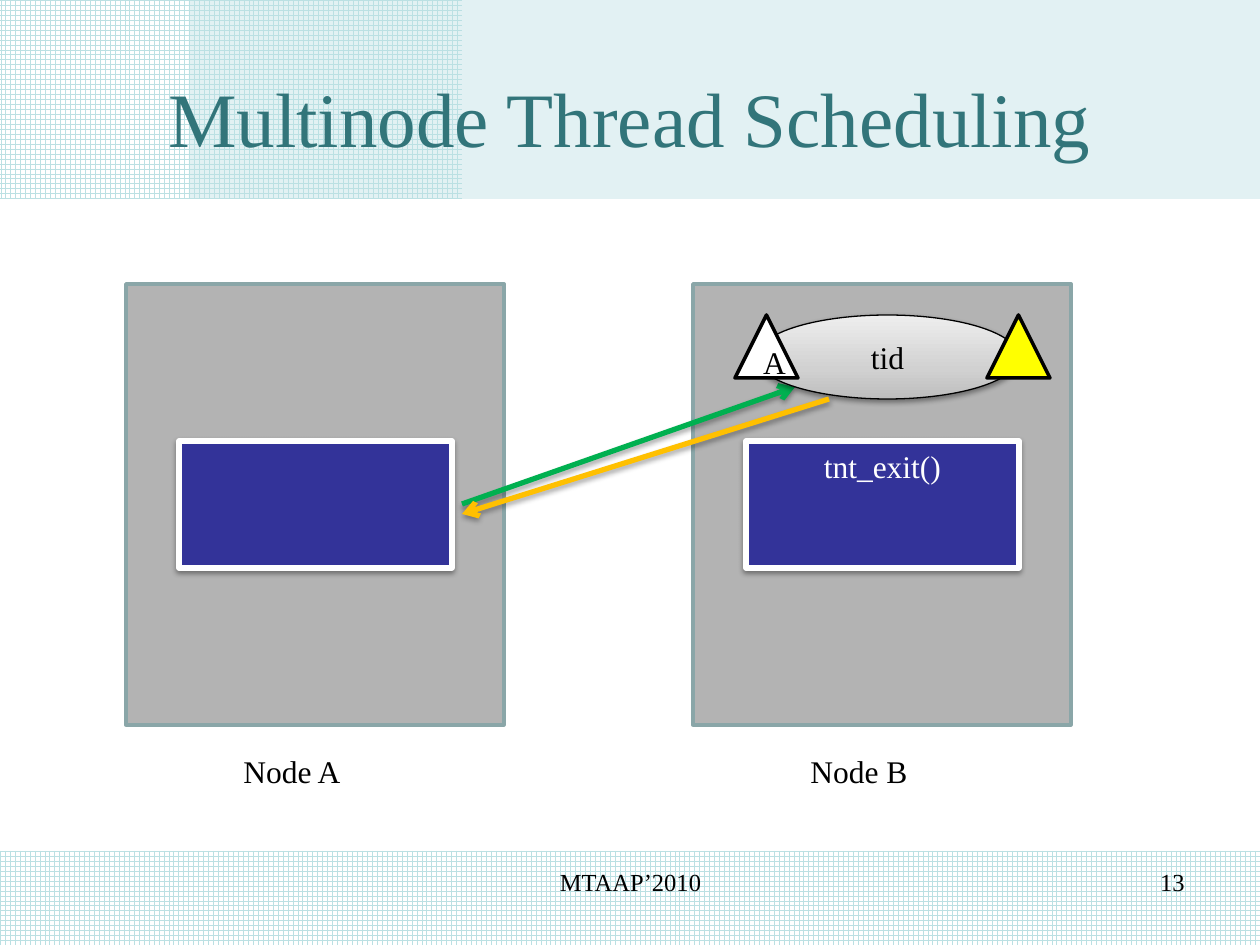
from copy import deepcopy
from pptx import Presentation
from pptx.dml.color import RGBColor
from pptx.enum.dml import MSO_PATTERN
from pptx.enum.shapes import MSO_CONNECTOR, MSO_SHAPE
from pptx.enum.text import MSO_ANCHOR, MSO_AUTO_SIZE, PP_ALIGN
from pptx.oxml.ns import qn
from pptx.util import Emu, Pt
from lxml.etree import SubElement

WHITE = RGBColor(0xFF, 0xFF, 0xFF)
BLACK = RGBColor(0, 0, 0)
PALE = RGBColor(0xBB, 0xE0, 0xE3)
TEAL = RGBColor(0x32, 0x75, 0x7A)
GRAY = RGBColor(0xB3, 0xB3, 0xB3)
EDGE = RGBColor(0x8A, 0xA6, 0xA8)
NAVY = RGBColor(0x33, 0x33, 0x99)
GREEN = RGBColor(0x00, 0xB0, 0x50)
AMBER = RGBColor(0xFF, 0xC0, 0x00)
YELLOW = RGBColor(0xFF, 0xFF, 0x00)
DARK = RGBColor(0xBD, 0xBD, 0xBD)
MID = RGBColor(0xD1, 0xD1, 0xD1)
LIGHT = RGBColor(0xEE, 0xEE, 0xEE)
FONT = "Times New Roman"


def px(*nums):
    return [Emu(round(num * 914400 / 126)) for num in nums]


def write(frame, text, size, color, align, anchor=MSO_ANCHOR.TOP):
    frame.vertical_anchor = anchor
    para = frame.paragraphs[0]
    para.alignment = align
    run = para.add_run()
    run.text = text
    run.font.size = Pt(size)
    run.font.name = FONT
    run.font.color.rgb = color


def shade(props, alpha, dist):
    effect = props.find(qn("a:effectLst"))
    if effect is None:
        effect = SubElement(props, qn("a:effectLst"))
    outer = SubElement(effect, qn("a:outerShdw"), blurRad=str(Pt(3.1)),
                       dist=str(Pt(dist)), dir="5400000", rotWithShape="0")
    tint = SubElement(outer, qn("a:srgbClr"), val="000000")
    SubElement(tint, qn("a:alpha"), val=str(alpha * 1000))


def draw(slide, kind, box, fill=None, edge=None, width=0):
    shape = slide.shapes.add_shape(kind, *px(*box))
    shape.shadow.inherit = False
    if fill is not None:
        shape.fill.solid()
        shape.fill.fore_color.rgb = fill
    if edge is None:
        shape.line.fill.background()
    else:
        shape.line.color.rgb = edge
        shape.line.width = Pt(width)
    return shape


def label(slide, box, text, size, align, wrap=True):
    frame = slide.shapes.add_textbox(*px(*box)).text_frame
    frame.word_wrap = wrap
    if not wrap:
        frame.auto_size = MSO_AUTO_SIZE.SHAPE_TO_FIT_TEXT
    write(frame, text, size, BLACK, align)


def arrow(slide, start, end, color):
    line = slide.shapes.add_connector(MSO_CONNECTOR.STRAIGHT,
                                      *px(*start, *end))
    line.line.color.rgb = color
    line.line.width = Pt(3)
    SubElement(line.line._get_or_add_ln(), qn("a:tailEnd"), type="arrow")
    shade(line._element.spPr, 35, 1.8)


def grid(slide, box):
    fill = draw(slide, MSO_SHAPE.FLOWCHART_PROCESS, box).fill
    fill.patterned()
    fill.pattern = MSO_PATTERN.LARGE_GRID
    fill.fore_color.rgb = PALE
    fill.back_color.rgb = WHITE


def header(slide, box, text):
    x, y, w, h = box
    grid(slide, (x, y, 462, h))
    band = draw(slide, MSO_SHAPE.FLOWCHART_PROCESS,
                (x + 189, y, w - 189, h), PALE)
    color = band._element.spPr.find(qn("a:solidFill"))[0]
    SubElement(color, qn("a:alpha"), val="42000")
    title = slide.shapes.title
    title.left, title.top, title.width, title.height = px(
        x + 63, y + 38, w - 126, 157)
    write(title.text_frame, text, 44, TEAL, PP_ALIGN.CENTER,
          MSO_ANCHOR.MIDDLE)
    slide.shapes._spTree.append(title._element)


def footer(slide, box, text, page):
    x, y, w, h = box
    grid(slide, box)
    label(slide, (x + 431, y + 10, 399, 66), text, 14, PP_ALIGN.CENTER)
    label(slide, (x + 903, y + 10, 294, 66), page, 14, PP_ALIGN.RIGHT)


def node(slide, box, name, call=None):
    x, y, w, h = box
    draw(slide, MSO_SHAPE.RECTANGLE, box, GRAY, EDGE, 2)
    label(slide, (x + 105, y + h + 21, 125, 50), name, 18,
          PP_ALIGN.LEFT, False)
    core = draw(slide, MSO_SHAPE.RECTANGLE, (x + 53, y + 157, 273, 127),
                NAVY, WHITE, 3)
    shade(core._element.spPr, 38, 1.6)
    if call:
        write(core.text_frame, call, 18, WHITE, PP_ALIGN.CENTER)


def thread(slide, box, name, home):
    x, y, w, h = box
    oval = draw(slide, MSO_SHAPE.OVAL, (x + 21, y, w - 52, h),
                edge=BLACK, width=0.75)
    oval.fill.gradient()
    oval.fill.gradient_angle = 90
    stops = oval._element.spPr.find(qn("a:gradFill")).find(qn("a:gsLst"))
    stops.insert(1, deepcopy(stops[0]))
    for stop, spot, color in zip(oval.fill.gradient_stops, (0, 0.35, 1),
                                 (DARK, MID, LIGHT)):
        stop.position = spot
        stop.color.rgb = color
    shade(oval._element.spPr, 38, 1.6)
    write(oval.text_frame, name, 18, BLACK, PP_ALIGN.CENTER,
          MSO_ANCHOR.MIDDLE)
    left, right = [
        draw(slide, MSO_SHAPE.ISOSCELES_TRIANGLE, (spot, y, 63, 63),
             fill, BLACK, 2)
        for spot, fill in ((x, WHITE), (x + w - 63, YELLOW))]
    write(left.text_frame, home, 18, BLACK, PP_ALIGN.CENTER,
          MSO_ANCHOR.MIDDLE)


def main():
    deck = Presentation()
    deck.slide_width, deck.slide_height = px(1260, 945)
    slide = deck.slides.add_slide(deck.slide_layouts[5])
    header(slide, (0, 0, 1260, 199), "Multinode Thread Scheduling")
    footer(slide, (0, 851, 1260, 94), "MTAAP’2010", "13")
    node(slide, (126, 284, 378, 441), "Node A")
    node(slide, (693, 284, 378, 441), "Node B", "tnt_exit()")
    arrow(slide, (462, 504), (795, 387), GREEN)
    thread(slide, (735, 315, 315, 84), "tid", "A")
    arrow(slide, (829, 399), (462, 514), AMBER)
    deck.save("out.pptx")


if __name__ == "__main__":
    main()
